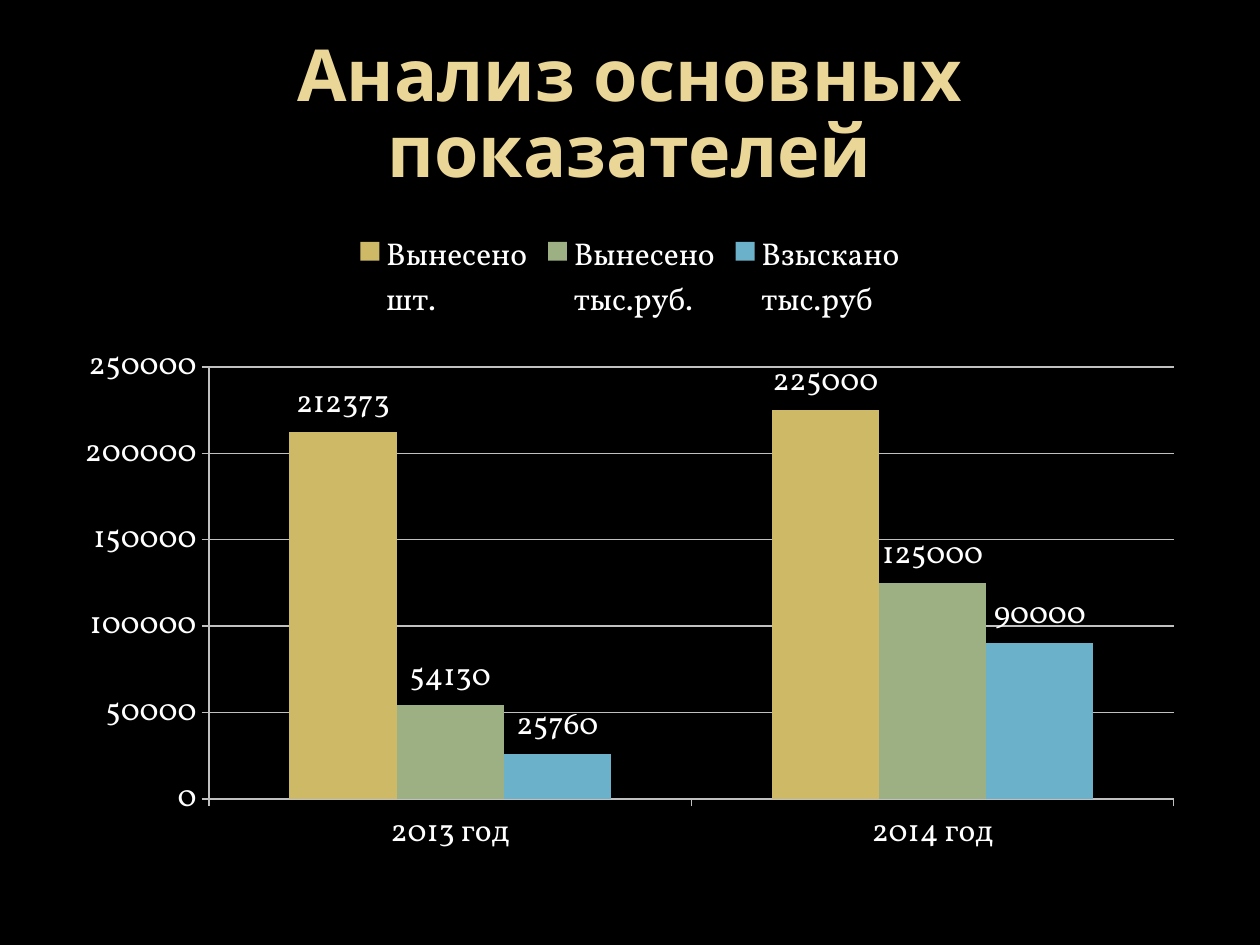
from lxml.etree import SubElement
from pptx import Presentation
from pptx.chart.data import CategoryChartData as Data
from pptx.dml.color import RGBColor
from pptx.enum.chart import XL_CHART_TYPE as Kind, XL_LABEL_POSITION as Spot
from pptx.enum.chart import XL_LEGEND_POSITION as Side, XL_TICK_MARK as Tick
from pptx.enum.text import MSO_ANCHOR as Anchor, MSO_AUTO_SIZE as Fit, PP_ALIGN as Align
from pptx.oxml.ns import qn
from pptx.util import Emu, Pt

SCALE = 914400 / 126


def px(n):
    return Emu(round(n * SCALE))


def paint(fill, color):
    fill.solid()
    fill.fore_color.rgb = RGBColor.from_string(color)


class Deck:
    head, body = "Noto Sans", "Vollkorn"
    back, gold, white, grid = "000000", "EAD696", "FFFFFF", "C0C0C0"

    def __init__(self, wide, high):
        self.prs = Presentation()
        self.prs.slide_width, self.prs.slide_height = px(wide), px(high)
        self.slide = self.prs.slides.add_slide(self.prs.slide_layouts[5])
        paint(self.slide.background.fill, self.back)

    def title(self, text, box, size):
        shape = self.slide.shapes.title
        shape.left, shape.top, shape.width, shape.height = map(px, box)
        frame = shape.text_frame
        frame.text = text
        frame.word_wrap = True
        frame.auto_size = Fit.NONE
        frame.vertical_anchor = Anchor.MIDDLE
        para = frame.paragraphs[0]
        para.alignment = Align.CENTER
        para.line_spacing = 0.88
        font = para.runs[0].font
        font.name, font.size, font.bold = self.head, Pt(size), True
        paint(font.fill, self.gold)

    def line(self, fmt):
        paint(fmt.line.fill, self.grid)
        fmt.line.width = Pt(0.75)

    def chart(self, cats, rows, box, plot, size):
        data = Data()
        data.categories = cats
        for name, vals, _ in rows:
            data.add_series(name, vals)
        chart = self.slide.shapes.add_chart(
            Kind.COLUMN_CLUSTERED, *map(px, box), data).chart
        chart.has_title = False
        chart.font.name, chart.font.size = self.body, Pt(size)
        paint(chart.font.fill, self.white)

        chart.has_legend = True
        chart.legend.position = Side.TOP
        chart.legend.include_in_layout = False

        for axis in (chart.category_axis, chart.value_axis):
            axis.major_tick_mark = Tick.OUTSIDE
            axis.minor_tick_mark = Tick.NONE
            self.line(axis.format)
        axis = chart.value_axis
        axis.minimum_scale, axis.maximum_scale = 0, 250000
        axis.major_unit = 50000
        axis.has_major_gridlines = True
        self.line(axis.major_gridlines.format)

        bars = chart.plots[0]
        bars.gap_width, bars.overlap = 150, 0
        bars.vary_by_categories = False
        for row, (_, _, color) in zip(bars.series, rows):
            paint(row.format.fill, color)
            row.invert_if_negative = False
            labels = row.data_labels
            labels.show_value = True
            labels.position = Spot.OUTSIDE_END
        self.place(chart, box, plot)

    def place(self, chart, box, plot):
        """Fix the inner plot area, given in slide px."""
        area = chart.plots[0]._element.getparent()
        layout = area.find(qn("c:layout"))
        if layout is None:
            layout = SubElement(area, qn("c:layout"))
            area.insert(0, layout)
        hand = SubElement(layout, qn("c:manualLayout"))
        left, top, wide, high = box
        x, y, w, h = plot
        parts = [("layoutTarget", "inner"), ("xMode", "edge"), ("yMode", "edge"),
                 ("x", (x - left) / wide), ("y", (y - top) / high),
                 ("w", w / wide), ("h", h / high)]
        for tag, val in parts:
            SubElement(hand, qn("c:" + tag)).set("val", str(val))


def main():
    deck = Deck(1260, 945)
    deck.title("Анализ основных показателей", (63, 38, 1134, 158), 41)
    rows = [
        ("Вынесено\nшт.", (212373, 225000), "CEB966"),
        ("Вынесено\nтыс.руб.", (54130, 125000), "9CB084"),
        ("Взыскано\nтыс.руб", (25760, 90000), "6BB1C9"),
    ]
    deck.chart(("2013 год", "2014 год"), rows,
               (63, 220, 1134, 649), (209, 367, 965, 432), 18)
    deck.prs.save("out.pptx")


if __name__ == "__main__":
    main()
